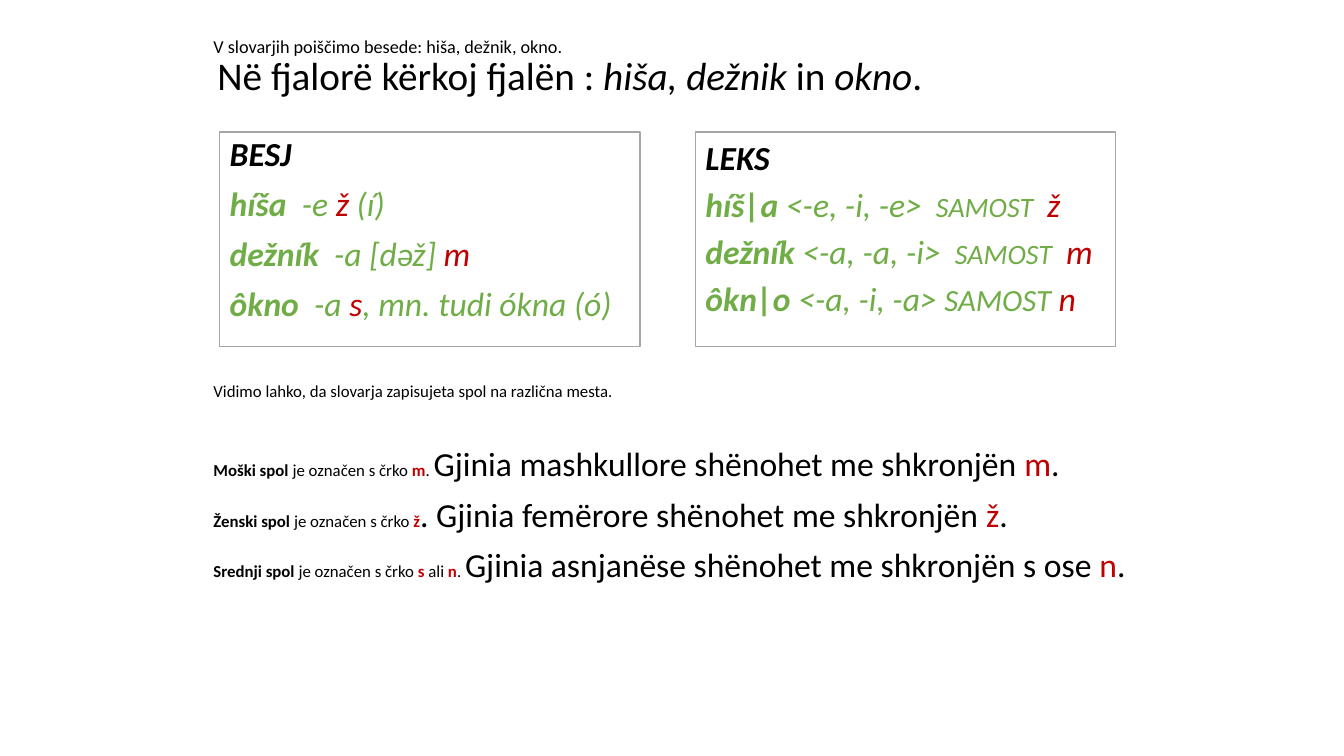
from pptx import Presentation
from pptx.dml.color import RGBColor
from pptx.enum.shapes import MSO_SHAPE as Shape
from pptx.enum.text import MSO_ANCHOR as Anchor, PP_ALIGN as Align
from pptx.util import Cm, Pt

BLACK = RGBColor(0x00, 0x00, 0x00)
GREEN = RGBColor(0x70, 0xAD, 0x47)
RED = RGBColor(0xC0, 0x00, 0x00)
GREY = RGBColor(0xA6, 0xA6, 0xA6)


def add_para(frame, spans, before=0, spacing=0.9, hanging=0, margin=0):
    first = frame.paragraphs[0]
    para = frame.add_paragraph() if first.runs else first
    para.alignment = Align.LEFT
    para.line_spacing = spacing
    para.space_before = Pt(before)
    properties = para._p.get_or_add_pPr()
    properties.set("marL", str(Cm(hanging + margin)))
    properties.set("indent", str(-Cm(hanging)))
    for text, size, color, style in spans:
        span = para.add_run()
        span.text = text
        span.font.name = "Calibri"
        span.font.size = Pt(size)
        span.font.color.rgb = color
        span.font.bold = "b" in style
        span.font.italic = "i" in style


def add_text(left, top, width, height, anchor):
    box = page.shapes.add_textbox(Cm(left), Cm(top), Cm(width), Cm(height))
    box.text_frame.word_wrap = True
    box.text_frame.vertical_anchor = anchor
    return box.text_frame


deck = Presentation()
deck.slide_width, deck.slide_height = Cm(33.87), Cm(19.05)
page = deck.slides.add_slide(deck.slide_layouts[6])

title = add_text(5.13, 0.53, 22.86, 2.39, Anchor.MIDDLE)
add_para(title, [("V slovarjih poiščimo besede: hiša, dežnik, okno.", 13, BLACK, "")])
add_para(title, [
    ("Në fjalorë kërkoj fjalën : ", 28, BLACK, ""),
    ("hiša, dežnik", 28, BLACK, "i"),
    (" in ", 28, BLACK, ""),
    ("okno", 28, BLACK, "i"),
    (".", 28, BLACK, ""),
], margin=0.1)

dictionaries = [
    (5.54, 10, 0.9, 0.64, [
        [("BESJ", 24, BLACK, "bi")],
        [("híša", 24, GREEN, "bi"), ("  -e ", 24, GREEN, "i"),
         ("ž ", 24, RED, "i"), ("(í)", 24, GREEN, "i")],
        [("dežník", 24, GREEN, "bi"), ("  -a [dǝž] ", 24, GREEN, "i"),
         ("m", 24, RED, "i")],
        [("ôkno", 24, GREEN, "bi"), ("  -a ", 24, GREEN, "i"),
         ("s", 24, RED, "i"), (", mn. tudi ókna (ó)", 24, GREEN, "i")],
    ]),
    (17.53, 4.8, 1, 0.95, [
        [("LEKS", 24, BLACK, "bi")],
        [("híš|a", 24, GREEN, "bi"), (" <-e, -i, -e> ", 24, GREEN, "i"),
         (" SAMOST ", 20, GREEN, "i"), (" ž", 24, RED, "i")],
        [("dežník", 24, GREEN, "bi"), (" <-a, -a, -i> ", 24, GREEN, "i"),
         (" SAMOST ", 20, GREEN, "i"), (" m", 24, RED, "i")],
        [("ôkn|o ", 24, GREEN, "bi"), ("<-a, -i, -a> ", 24, GREEN, "i"),
         ("SAMOST", 22, GREEN, "i"), (" n", 24, RED, "i")],
    ]),
]
for left, before, spacing, hanging, entries in dictionaries:
    card = page.shapes.add_shape(Shape.RECTANGLE, Cm(left), Cm(3.33), Cm(10.59), Cm(5.41))
    card.shadow.inherit = False
    card.fill.background()
    card.line.color.rgb = GREY
    card.line.width = Pt(1)
    card.text_frame.word_wrap = True
    card.text_frame.vertical_anchor = Anchor.TOP
    for entry in entries:
        add_para(card.text_frame, entry, before, spacing, hanging)

rules = add_text(5.13, 9.53, 23.6, 7.19, Anchor.TOP)
add_para(rules, [("Vidimo lahko, da slovarja zapisujeta spol na različna mesta.", 12, BLACK, "")],
         10, hanging=0.64)

genders = [
    ("Moški", [("m", 12, RED, "b"), (". ", 12, BLACK, "")],
     "Gjinia mashkullore shënohet me shkronjën ", "m", 33.2),
    ("Ženski", [("ž", 12, RED, "b"), (". ", 24, BLACK, "")],
     "Gjinia femërore shënohet me shkronjën ", "ž", 10),
    ("Srednji", [("s", 12, RED, "b"), (" ali ", 12, BLACK, ""),
                 ("n", 12, RED, "b"), (". ", 12, BLACK, "")],
     "Gjinia asnjanëse shënohet me shkronjën s ose ", "n", 10),
]
for gender, marks, translation, letter, before in genders:
    add_para(rules, [
        (gender + " spol ", 12, BLACK, "b"),
        ("je označen s črko ", 12, BLACK, ""),
        *marks,
        (translation, 24, BLACK, ""),
        (letter, 24, RED, ""),
        (".", 24, BLACK, ""),
    ], before, hanging=0.64)

deck.save("out.pptx")
